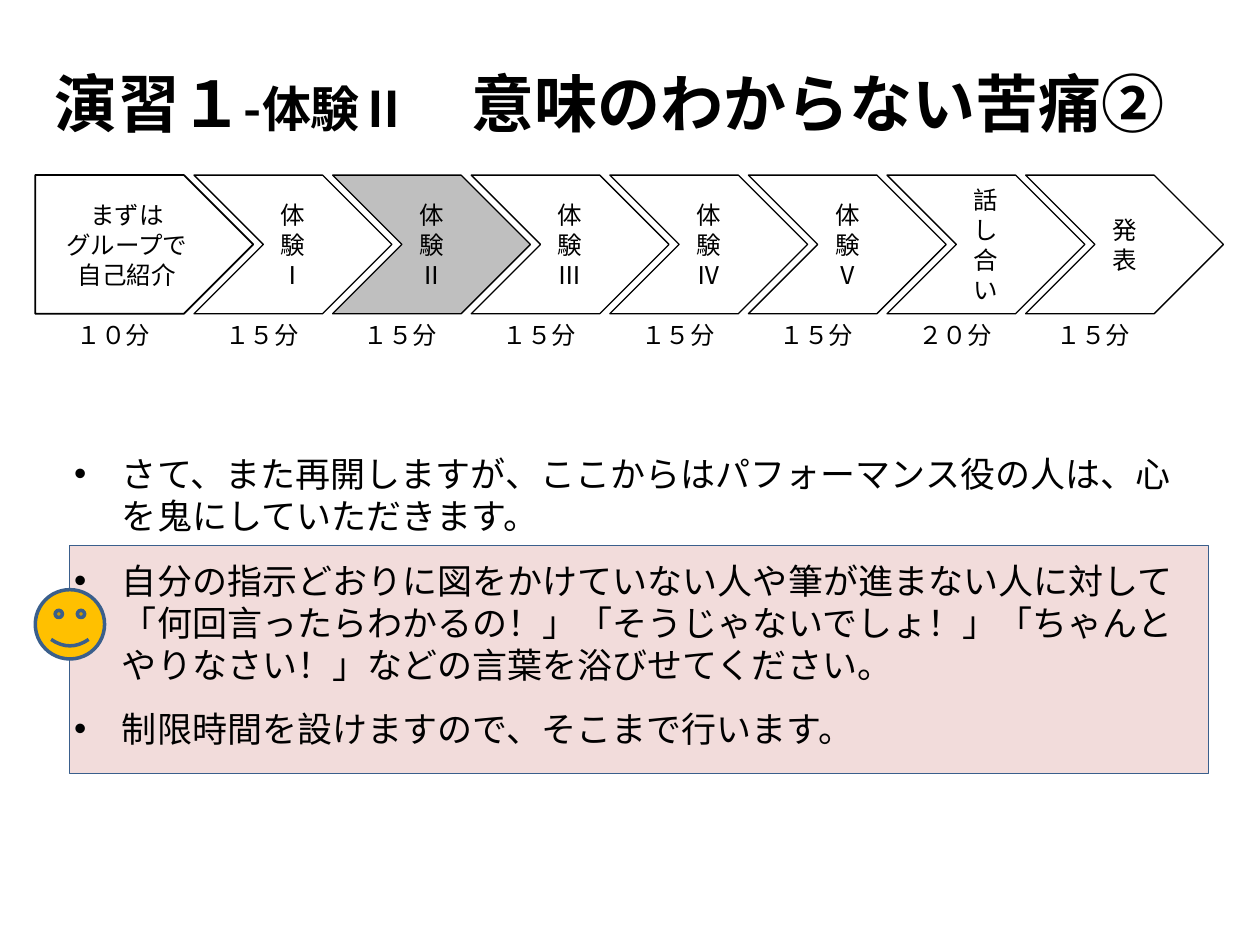
from pptx import Presentation
from pptx import util as u
from pptx.dml.color import RGBColor
from pptx.enum import shapes, text
from pptx.oxml.ns import qn
from lxml import etree

FONT = "Noto Sans CJK JP"
COLORS = {"ink": "000000", "paper": "FFFFFF", "current": "BFBFBF",
          "panel": "F2DCDB", "edge": "3A5F8C", "smile": "FFC000"}
STEP, ROW = 1.1, 1.39
LEFT, FIRST = 0.28, 1.54


def add_run(p, words, size, bold=False):
    r = p.add_run()
    r.text = words
    r.font.size, r.font.bold, r.font.name = u.Pt(size), bold, FONT
    r.font.color.rgb = RGBColor.from_string(COLORS["ink"])
    etree.SubElement(r.font._element, qn("a:ea")).set("typeface", FONT)


def add_shape(kind, box, fill, line, width):
    sp = slide.shapes.add_shape(kind, *map(u.Inches, box))
    sp.shadow.inherit = False
    if fill:
        sp.fill.solid()
        sp.fill.fore_color.rgb = RGBColor.from_string(COLORS[fill])
    else:
        sp.fill.background()
    sp.line.color.rgb = RGBColor.from_string(COLORS[line])
    sp.line.width = u.Pt(width)
    return sp


prs = Presentation()
prs.slide_width, prs.slide_height = u.Inches(10), u.Inches(7.5)
slide = prs.slides.add_slide(prs.slide_layouts[5])
MSO = shapes.MSO_SHAPE

title = slide.shapes.title
title.left, title.top, title.width, title.height = map(u.Inches, (0.09, 0.19, 9.5, 1.25))
tf = title.text_frame
tf.auto_size = text.MSO_AUTO_SIZE.NONE
tf.vertical_anchor = text.MSO_ANCHOR.MIDDLE
p = tf.paragraphs[0]
p.alignment = text.PP_ALIGN.CENTER
for words, size in [("演習１", 36), ("-体験Ⅱ", 28), ("　意味のわからない苦痛②", 36)]:
    add_run(p, words, size, True)

add_shape(MSO.RECTANGLE, (0.55, 4.33, 9.04, 1.81), "panel", "edge", 0.75)

steps = [
    (["まずは", "グループで", "自己紹介"], "１０分", "paper"),
    (["体験Ⅰ"], "１５分", "paper"),
    (["体験Ⅱ"], "１５分", "current"),
    (["体験Ⅲ"], "１５分", None),
    (["体験Ⅳ"], "１５分", None),
    (["体験Ⅴ"], "１５分", None),
    (["話し合い"], "２０分", None),
    (["発表"], "１５分", None),
]
for i, (lines, minutes, fill) in enumerate(steps):
    x = FIRST + (i - 1) * STEP
    if i == 0:
        sp = add_shape(MSO.PENTAGON, (LEFT, ROW, 1.73, STEP), fill, "ink", 1)
    else:
        sp = add_shape(MSO.CHEVRON, (x, ROW, 1.57, STEP), fill, "ink", 0.75)
    tf = sp.text_frame
    tf.word_wrap = True
    tf.vertical_anchor = text.MSO_ANCHOR.MIDDLE
    for j, words in enumerate(lines):
        p = tf.add_paragraph() if j else tf.paragraphs[0]
        p.alignment = text.PP_ALIGN.CENTER
        p.line_spacing = u.Pt(17)
        add_run(p, words, 14)

    label_x = x + 0.15 if i else LEFT + 0.23
    label = slide.shapes.add_textbox(*map(u.Inches, (label_x, ROW + STEP, 0.87, 0.34)))
    p = label.text_frame.paragraphs[0]
    p.line_spacing = u.Pt(17)
    add_run(p, minutes, 14)

add_shape(MSO.SMILEY_FACE, (LEFT, 4.68, STEP / 2, STEP / 2), "smile", "edge", 2)

body = slide.shapes.add_textbox(*map(u.Inches, (0.49, 3.54, 9, 3.69)))
tf = body.text_frame
tf.word_wrap = True
notes = [
    "さて、また再開しますが、ここからはパフォーマンス役の人は、心を鬼にしていただきます。",
    "自分の指示どおりに図をかけていない人や筆が進まない人に対して「何回言ったらわかるの！」「そうじゃないでしょ！」「ちゃんとやりなさい！」などの言葉を浴びせてください。",
    "制限時間を設けますので、そこまで行います。",
]
for i, words in enumerate(notes):
    p = tf.add_paragraph() if i else tf.paragraphs[0]
    p.line_spacing = u.Pt(24)
    p.space_before = u.Pt(13 if i else 4)
    pPr = p._p.get_or_add_pPr()
    pPr.set("marL", str(u.Inches(0.38)))
    pPr.set("indent", str(-u.Inches(0.38)))
    etree.SubElement(pPr, qn("a:buFont")).set("typeface", "Arial")
    etree.SubElement(pPr, qn("a:buChar")).set("char", "•")
    add_run(p, words, 20)

prs.save("out.pptx")
